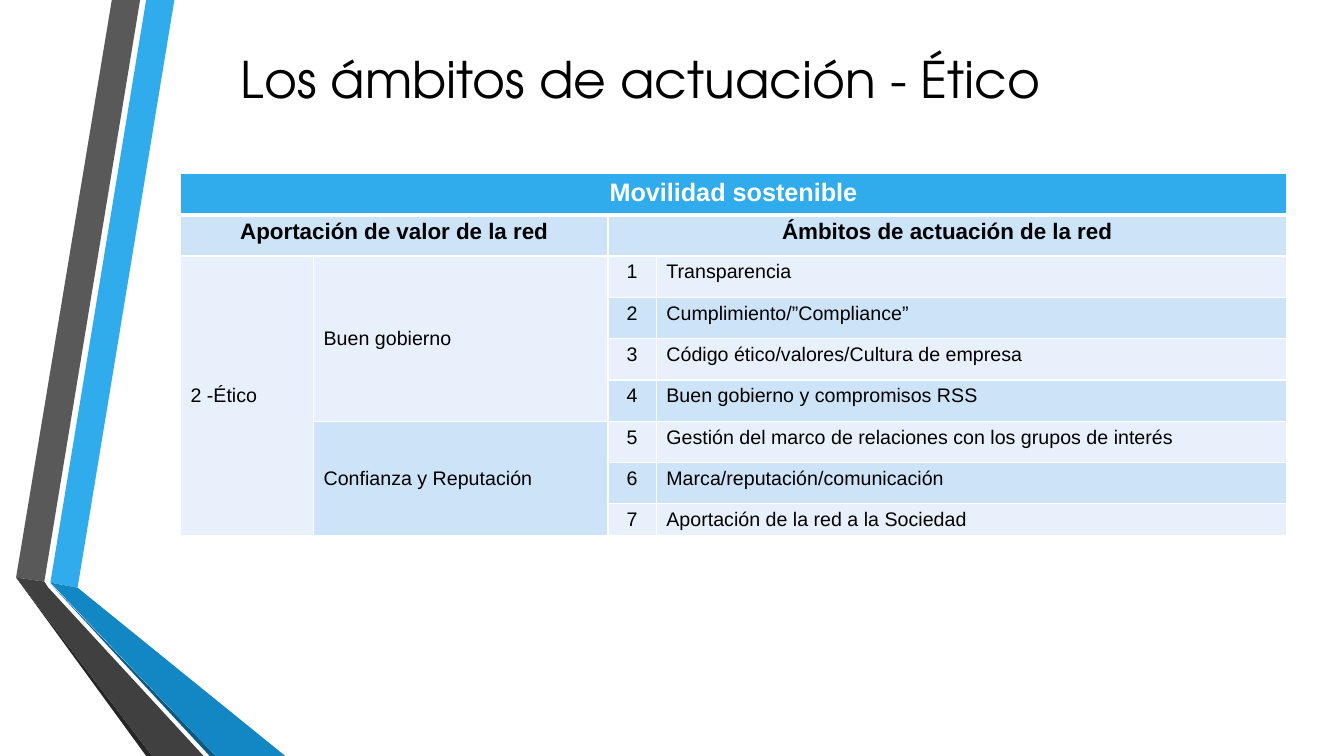
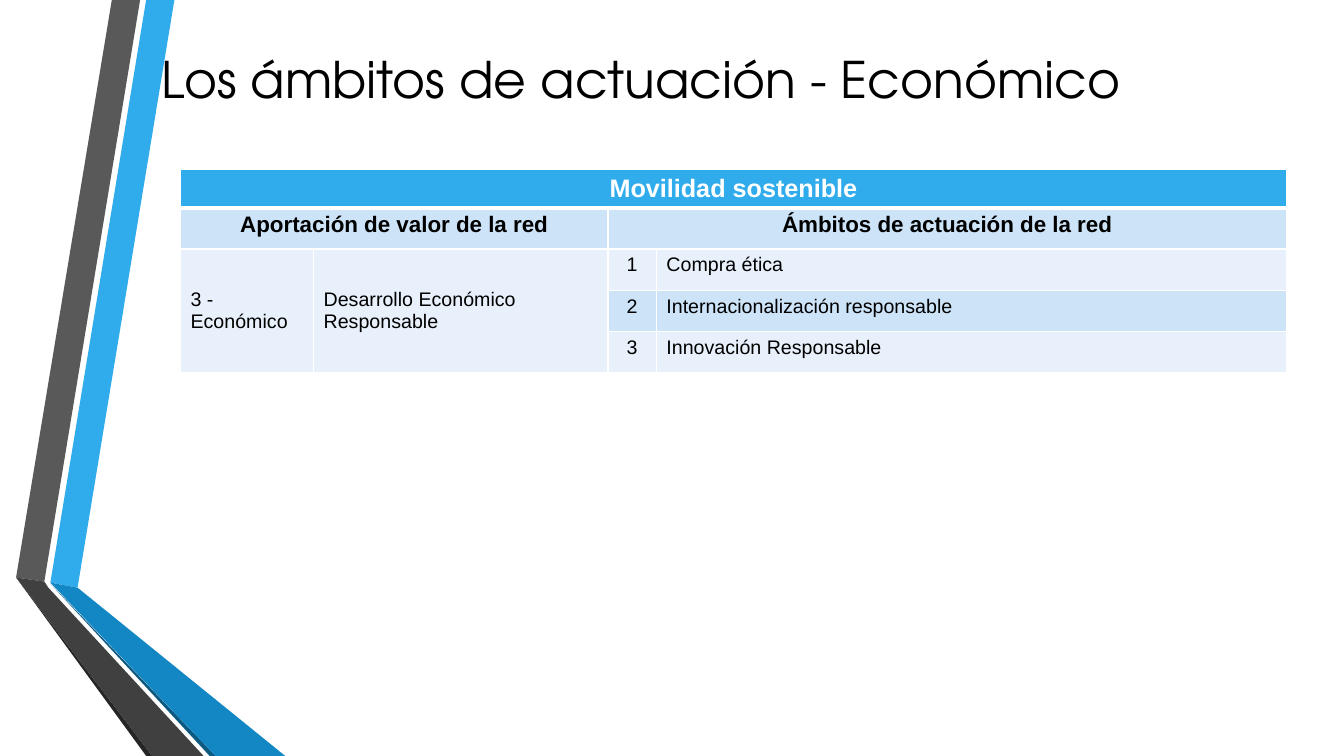
from lxml.etree import SubElement
from pptx import Presentation
from pptx.dml.color import RGBColor
from pptx.enum.text import MSO_ANCHOR, PP_ALIGN
from pptx.oxml.ns import qn
from pptx.util import Inches, Pt

WHITE = RGBColor(0xFF, 0xFF, 0xFF)
BLACK = RGBColor(0, 0, 0)
SKY = RGBColor(0x30, 0xAC, 0xEC)
BLUE = RGBColor(0x12, 0x87, 0xC3)
NAVY = RGBColor(0x0C, 0x5A, 0x82)
GREY = RGBColor(0x59, 0x59, 0x59)
CHARCOAL = RGBColor(0x40, 0x40, 0x40)
SOOT = RGBColor(0x26, 0x26, 0x26)
BANDS = (RGBColor(0xE8, 0xF1, 0xFB), RGBColor(0xCD, 0xE3, 0xF8))

TITLE_FONT = "TeX Gyre Adventor"
BODY_FONT = "Arial"

RIBBONS = [
    (SKY, [(0.5, 5.78), (0.77, 5.83), (1.73, 0), (1.45, 0)]),
    (GREY, [(1.39, 0), (1.11, 0), (0.16, 5.73), (0.44, 5.77)]),
    (SOOT, [(0.16, 5.73), (1.45, 7.5), (1.51, 7.5)]),
    (NAVY, [(0.5, 5.79), (2.08, 7.5), (2.14, 7.5)]),
    (BLUE, [(0.5, 5.78), (2.14, 7.5), (2.83, 7.5), (0.77, 5.83)]),
    (CHARCOAL, [(2.02, 7.5), (0.48, 5.83), (0.44, 5.77), (0.16, 5.73), (1.51, 7.5)]),
]

TABLE_HEADING = "Movilidad sostenible"
COLUMN_HEADINGS = ("Aportación de valor de la red", "Ámbitos de actuación de la red")
COLUMN_WIDTHS = (1.32, 2.92, 0.48, 6.25)
ROW_HEIGHT = 0.41

TOPICS = [
    {
        "title": "Los ámbitos de actuación - Ético",
        "dimension": "2 -Ético",
        "values": [
            ("Buen gobierno", [
                "Transparencia",
                "Cumplimiento/”Compliance”",
                "Código ético/valores/Cultura de empresa",
                "Buen gobierno y compromisos RSS",
            ]),
            ("Confianza y Reputación", [
                "Gestión del marco de relaciones con los grupos de interés",
                "Marca/reputación/comunicación",
                "Aportación de la red a la Sociedad",
            ]),
        ],
        "top": 1.72,
        "first_height": 0.41,
        "last_height": 0.31,
    },
    {
        "title": "Los ámbitos de actuación - Económico",
        "dimension": "3 - Económico",
        "values": [
            ("Desarrollo Económico Responsable", [
                "Compra ética",
                "Internacionalización responsable",
                "Innovación Responsable",
            ]),
        ],
        "top": 1.68,
        "first_height": 0.38,
        "last_height": ROW_HEIGHT,
    },
]


def write(frame, text, size=14, font=BODY_FONT, color=BLACK, bold=False,
          align=PP_ALIGN.LEFT):
    paragraph = frame.paragraphs[0]
    paragraph.alignment = align
    run = paragraph.add_run()
    run.text = text
    run.font.size = Pt(size)
    run.font.name = font
    run.font.bold = bold
    run.font.color.rgb = color


def add_ribbons(slide, layout):
    """Build the ribbons with the slide's builder, then move them to the layout."""
    for color, corners in RIBBONS:
        points = [(Inches(x), Inches(y)) for x, y in corners]
        builder = slide.shapes.build_freeform(*points[0])
        builder.add_line_segments(points[1:], close=True)
        ribbon = builder.convert_to_shape()
        ribbon.fill.solid()
        ribbon.fill.fore_color.rgb = color
        ribbon.line.fill.background()
        ribbon.shadow.inherit = False
        layout.shapes.element.append(ribbon.element)


def add_title(slide, text):
    title = slide.shapes.title
    title.left, title.top = Inches(1), Inches(0.38)
    title.width, title.height = Inches(10.71), Inches(0.79)
    title.text_frame.vertical_anchor = MSO_ANCHOR.MIDDLE
    write(title.text_frame, text, size=36, font=TITLE_FONT, align=PP_ALIGN.CENTER)


def set_borders(cell, top=1, bottom=1):
    properties = cell._tc.get_or_add_tcPr()
    for side, width in (("L", 1), ("R", 1), ("T", top), ("B", bottom)):
        line = SubElement(properties, qn(f"a:ln{side}"), w=str(Pt(width)))
        fill = SubElement(line, qn("a:solidFill"))
        SubElement(fill, qn("a:srgbClr"), val=str(WHITE))


def fill_cell(table, row, column, text, fill, rows=1, columns=1,
              anchor=MSO_ANCHOR.TOP, **text_format):
    """Write one cell, merged over the given rows and columns."""
    cell = table.cell(row, column)
    if rows * columns > 1:
        cell.merge(table.cell(row + rows - 1, column + columns - 1))
    for r in range(row, row + rows):
        for c in range(column, column + columns):
            part = table.cell(r, c)
            set_borders(part, top=3 if r == 1 else 1, bottom=3 if r == 0 else 1)
            part.fill.solid()
            part.fill.fore_color.rgb = fill
    cell.vertical_anchor = anchor
    write(cell.text_frame, text, **text_format)


def add_scope_table(slide, topic):
    scope_count = sum(len(scopes) for _, scopes in topic["values"])
    heights = [topic["first_height"], *[ROW_HEIGHT] * scope_count, topic["last_height"]]
    table = slide.shapes.add_table(
        len(heights), len(COLUMN_WIDTHS), Inches(1.79), Inches(topic["top"]),
        Inches(sum(COLUMN_WIDTHS)), Inches(sum(heights))).table
    table.first_row = table.horz_banding = False
    for column, width in zip(table.columns, COLUMN_WIDTHS):
        column.width = Inches(width)
    for row, height in zip(table.rows, heights):
        row.height = Inches(height)

    heading = {"bold": True, "align": PP_ALIGN.CENTER}
    fill_cell(table, 0, 0, TABLE_HEADING, SKY, columns=4, size=18, color=WHITE, **heading)
    for index, text in enumerate(COLUMN_HEADINGS):
        fill_cell(table, 1, 2 * index, text, BANDS[1], columns=2, size=16, **heading)

    fill_cell(table, 2, 0, topic["dimension"], BANDS[0], rows=scope_count,
              anchor=MSO_ANCHOR.MIDDLE)
    row = 2
    for index, (value, scopes) in enumerate(topic["values"]):
        fill_cell(table, row, 1, value, BANDS[index % 2], rows=len(scopes),
                  anchor=MSO_ANCHOR.MIDDLE)
        for scope in scopes:
            band = BANDS[row % 2]
            fill_cell(table, row, 2, str(row - 1), band, align=PP_ALIGN.CENTER)
            fill_cell(table, row, 3, scope, band)
            row += 1


def main():
    deck = Presentation()
    deck.slide_width, deck.slide_height = Inches(13.33), Inches(7.5)
    layout = deck.slide_layouts.get_by_name("Title Only")
    for topic in TOPICS:
        slide = deck.slides.add_slide(layout)
        add_title(slide, topic["title"])
        add_scope_table(slide, topic)
    add_ribbons(slide, layout)
    deck.save("out.pptx")


if __name__ == "__main__":
    main()
